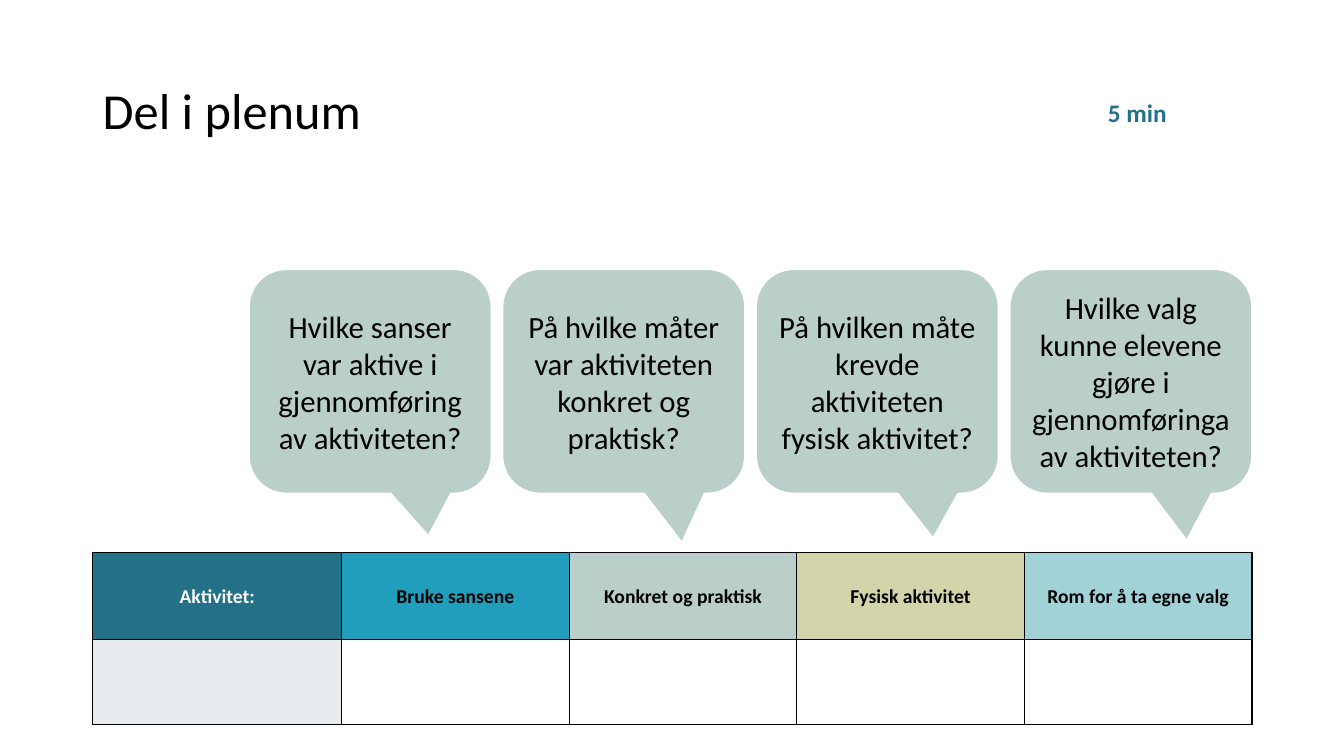
"""Build the plenary sharing slide with four question bubbles above an activity table."""
import pptx
import pptx.dml.color
import pptx.enum.shapes
import pptx.enum.text
import pptx.oxml
import pptx.oxml.ns
import pptx.util

Cm = pptx.util.Cm
Pt = pptx.util.Pt
PP_ALIGN = pptx.enum.text.PP_ALIGN
ANCHOR = pptx.enum.text.MSO_ANCHOR

HEADING = "Del i plenum"
DURATION = "5 min"
QUESTIONS = [
    ("Hvilke sanser var aktive i gjennomføring av aktiviteten?", (0.24, 0.69)),
    ("På hvilke måter var aktiviteten konkret og praktisk?", (0.24, 0.72)),
    ("På hvilken måte krevde aktiviteten fysisk aktivitet?", (0.23, 0.7)),
    ("Hvilke valg kunne elevene gjøre i gjennomføringa av aktiviteten?", (0.23, 0.71)),
]
ACTIVITY_COLUMNS = [
    ("Aktivitet:", "white", "petrol", "mist"),
    ("Bruke sansene", "black", "blue", "white"),
    ("Konkret og praktisk", "black", "sage", "white"),
    ("Fysisk aktivitet", "black", "sand", "white"),
    ("Rom for å ta egne valg", "black", "aqua", "white"),
]

THEME = {
    "font": "Calibri",
    "colors": {
        "black": "000000", "white": "FFFFFF", "petrol": "227186", "blue": "219EBC",
        "sage": "BACFCA", "sand": "D4D4AA", "aqua": "A0D2D8", "mist": "E8ECEE",
    },
    "sizes": {"heading": 36, "duration": 18, "question": 22, "column": 14},
}

SLIDE_SIZE = (33.87, 19.05)
HEADING_BOX = (2.34, 1.02, 29.21, 3.68)
DURATION_BOX = (27.1, 2.41, 3.12, 0.97)
BUBBLE_LEFT, BUBBLE_TOP, BUBBLE_PITCH = 6.27, 6.78, 6.39
BUBBLE_SIZE = (6.12, 5.66)
BUBBLE_CORNER = 0.167
TABLE_BOX = (2.34, 13.92, 29.21, 4.34)
FIRST_COLUMN = 6.27
ROW_HEIGHTS = (2.2, 2.14)
CELL_FORMAT = {
    "margin_left": Cm(0.19), "margin_right": Cm(0.19),
    "margin_top": Cm(0.1), "margin_bottom": Cm(0.1),
    "vertical_anchor": ANCHOR.MIDDLE,
}


def color(name):
    return pptx.dml.color.RGBColor.from_string(THEME["colors"][name])


def apply(target, values):
    for name, value in values.items():
        setattr(target, name, value)


def paint(fill, name):
    fill.solid()
    fill.fore_color.rgb = color(name)


def write(frame, wording, role, ink="black", bold=False, align=PP_ALIGN.CENTER, spacing=1.0):
    paragraph = frame.paragraphs[0]
    apply(paragraph, {"alignment": align, "line_spacing": spacing})
    run = paragraph.add_run()
    run.text = wording
    apply(run.font, {"name": THEME["font"], "size": Pt(THEME["sizes"][role]), "bold": bold})
    run.font.color.rgb = color(ink)


def add_label(slide, box, wording, role, anchor, **style):
    frame = slide.shapes.add_textbox(*map(Cm, box)).text_frame
    apply(frame, {"word_wrap": True, "vertical_anchor": anchor})
    write(frame, wording, role, spacing=0.9, **style)


def add_bubble(slide, index, question, tip):
    left = BUBBLE_LEFT + index * BUBBLE_PITCH
    bubble = slide.shapes.add_shape(
        pptx.enum.shapes.MSO_SHAPE.ROUNDED_RECTANGULAR_CALLOUT,
        Cm(left), Cm(BUBBLE_TOP), *map(Cm, BUBBLE_SIZE))
    for position, value in enumerate((*tip, BUBBLE_CORNER)):
        bubble.adjustments[position] = value
    bubble.shadow.inherit = False
    paint(bubble.fill, "sage")
    paint(bubble.line.fill, "white")
    bubble.line.width = Pt(1.5)
    apply(bubble.text_frame, {"word_wrap": True, "vertical_anchor": ANCHOR.MIDDLE})
    write(bubble.text_frame, question, "question")


def add_borders(cell):
    properties = cell._tc.get_or_add_tcPr()
    for position, side in enumerate(("lnL", "lnR", "lnT", "lnB")):
        properties.insert(position, pptx.oxml.parse_xml(
            f'<a:{side} {pptx.oxml.ns.nsdecls("a")} w="{Pt(1)}"><a:solidFill>'
            f'<a:srgbClr val="{THEME["colors"]["black"]}"/></a:solidFill></a:{side}>'))


def add_activity_table(slide):
    table = slide.shapes.add_table(
        len(ROW_HEIGHTS), len(ACTIVITY_COLUMNS), *map(Cm, TABLE_BOX)).table
    other_column = (TABLE_BOX[2] - FIRST_COLUMN) / (len(ACTIVITY_COLUMNS) - 1)
    for row, height in zip(table.rows, ROW_HEIGHTS):
        row.height = Cm(height)
    for index, (caption, ink, *fills) in enumerate(ACTIVITY_COLUMNS):
        table.columns[index].width = Cm(other_column if index else FIRST_COLUMN)
        for row_index, fill in enumerate(fills):
            cell = table.cell(row_index, index)
            apply(cell, CELL_FORMAT)
            paint(cell.fill, fill)
            add_borders(cell)
        write(table.cell(0, index).text_frame, caption, "column", ink, True, spacing=1.07)


def main():
    deck = pptx.Presentation()
    deck.slide_width, deck.slide_height = map(Cm, SLIDE_SIZE)
    slide = deck.slides.add_slide(deck.slide_layouts[6])
    add_label(slide, HEADING_BOX, HEADING, "heading", ANCHOR.MIDDLE, align=PP_ALIGN.LEFT)
    add_label(slide, DURATION_BOX, DURATION, "duration", ANCHOR.TOP, ink="petrol", bold=True)
    for index, (question, tip) in enumerate(QUESTIONS):
        add_bubble(slide, index, question, tip)
    add_activity_table(slide)
    deck.save("out.pptx")


if __name__ == "__main__":
    main()
